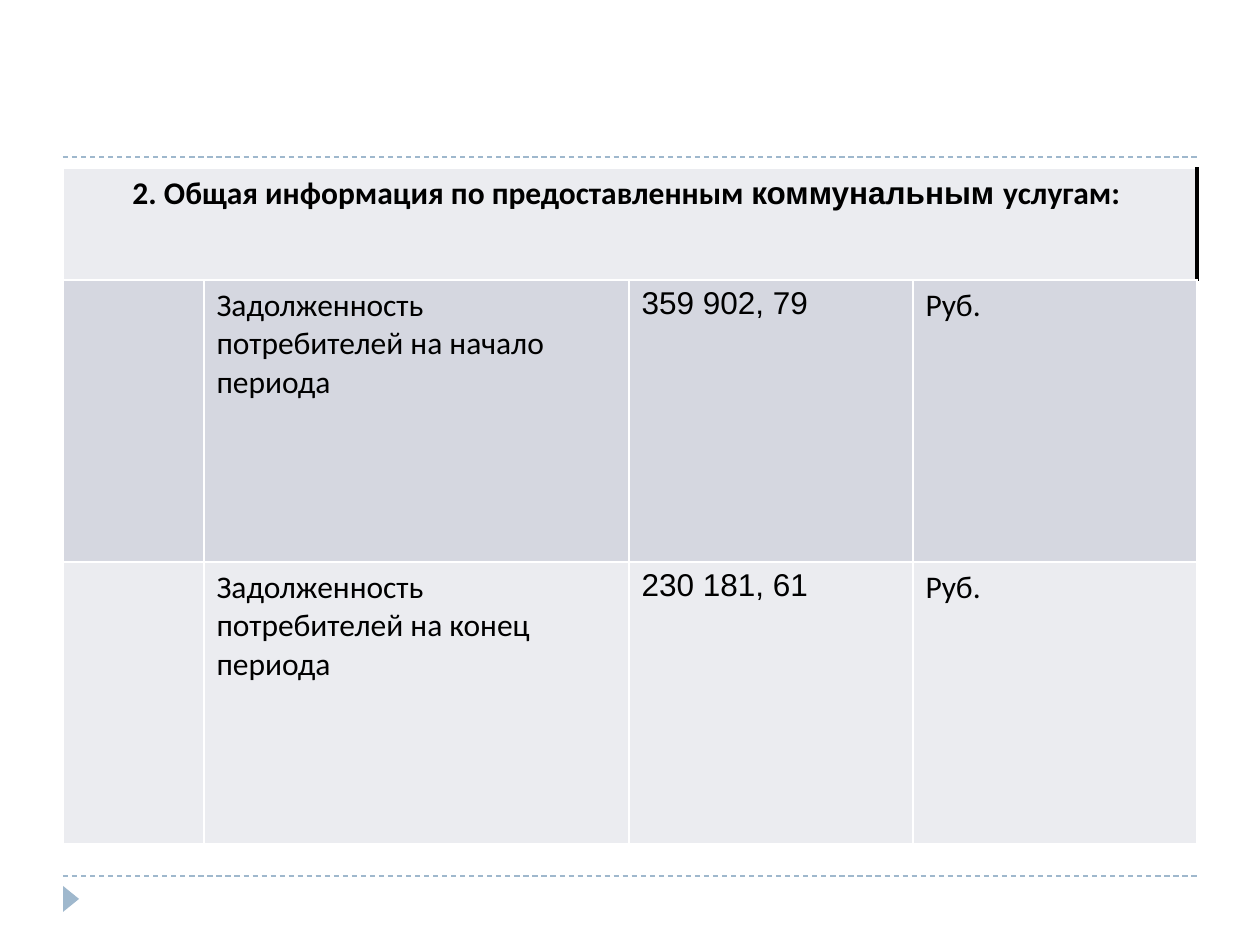
from typing import NamedTuple

from lxml import etree
from pptx import Presentation, util as u
from pptx.dml.color import RGBColor
from pptx.enum import dml, shapes, text
from pptx.oxml.ns import qn

PX = 914400 // 126
COLORS = {"accent": "9FB8CD", "light": "EBECF0", "dark": "D5D7E0",
          "border": "FFFFFF", "ink": "000000"}
COLUMNS = (141, 425, 284, 284)
ROWS = (112, 282, 282)
BORDERS = {"a:lnL": 1, "a:lnR": 1, "a:lnT": 1, "a:lnB": 1}


class Span(NamedTuple):
    text: str
    font: str = "Calibri"
    bold: bool = False


class Debt(NamedTuple):
    label: str
    amount: str
    fill: str


HEADING = (
    Span("2. Общая информация по предоставленным ", bold=True),
    Span("коммунальным ", "Arial", True),
    Span("услугам: ", bold=True),
)
DEBTS = (
    Debt("Задолженность потребителей на начало периода", "359 902, 79", "dark"),
    Debt("Задолженность потребителей на конец периода", "230 181, 61", "light"),
)


def px(length: int) -> u.Emu:
    return u.Emu(length * PX)


def rgb(name: str) -> RGBColor:
    return RGBColor.from_string(COLORS[name])


def draw_rule(page, top: int) -> None:
    rule = page.shapes.add_connector(
        shapes.MSO_CONNECTOR.STRAIGHT, px(63), px(top), px(1197), px(top))
    rule.line.color.rgb = rgb("accent")
    rule.line.width = u.Pt(0.75)
    rule.line.dash_style = dml.MSO_LINE.DASH
    etree.SubElement(rule._element.spPr, qn("a:effectLst"))


def draw_marker(page) -> None:
    marker = page.shapes.add_shape(
        shapes.MSO_SHAPE.ISOSCELES_TRIANGLE, px(58), px(891), px(26), px(16))
    marker.rotation = 90
    marker.shadow.inherit = False
    marker.fill.solid()
    marker.fill.fore_color.rgb = rgb("accent")
    marker.line.fill.background()


def set_border(cell, tag: str, color: str, points: float) -> None:
    line = etree.Element(qn(tag), w=str(u.Pt(points)))
    fill = etree.SubElement(line, qn("a:solidFill"))
    etree.SubElement(fill, qn("a:srgbClr"), val=COLORS[color])
    # Borders precede the fill, in the order left, right, top, bottom.
    cell._tc.get_or_add_tcPr().insert(list(BORDERS).index(tag), line)


def style_cell(cell, fill: str, right: tuple[str, float] = ("border", 1)) -> None:
    cell.fill.solid()
    cell.fill.fore_color.rgb = rgb(fill)
    for tag, points in BORDERS.items():
        set_border(cell, tag, *(right if tag == "a:lnR" else ("border", points)))


def write(cell, *spans: Span) -> None:
    para = cell.text_frame.paragraphs[0]
    for span in spans:
        run = para.add_run()
        run.text = span.text
        formats = {"name": span.font, "size": u.Pt(18), "bold": span.bold}
        for name, value in formats.items():
            setattr(run.font, name, value)
        run.font.color.rgb = rgb("ink")


def draw_table(page) -> None:
    table = page.shapes.add_table(
        len(ROWS), len(COLUMNS), px(63), px(168),
        px(sum(COLUMNS)), px(sum(ROWS))).table
    for name in ("first_row", "horz_banding"):
        setattr(table, name, False)
    for column, width in zip(table.columns, COLUMNS):
        column.width = px(width)
    for row, height in zip(table.rows, ROWS):
        row.height = px(height)

    heading = table.cell(0, 0)
    heading.merge(table.cell(0, len(COLUMNS) - 1))
    for cell in table.rows[0].cells:
        style_cell(cell, "light", right=("ink", 2.25))
    write(heading, *HEADING)
    heading.text_frame.paragraphs[0].alignment = text.PP_ALIGN.CENTER

    for index, debt in enumerate(DEBTS, start=1):
        cells = list(table.rows[index].cells)
        for cell in cells:
            style_cell(cell, debt.fill)
        spans = (Span(debt.label), Span(debt.amount, "Arial"), Span("Руб."))
        for cell, span in zip(cells[1:], spans):
            write(cell, span)


def main() -> None:
    deck = Presentation()
    deck.slide_width, deck.slide_height = px(1260), px(945)
    page = deck.slides.add_slide(deck.slide_layouts.get_by_name("Blank"))
    for top in (876, 157):
        draw_rule(page, top)
    draw_marker(page)
    draw_table(page)
    deck.save("out.pptx")


if __name__ == "__main__":
    main()
